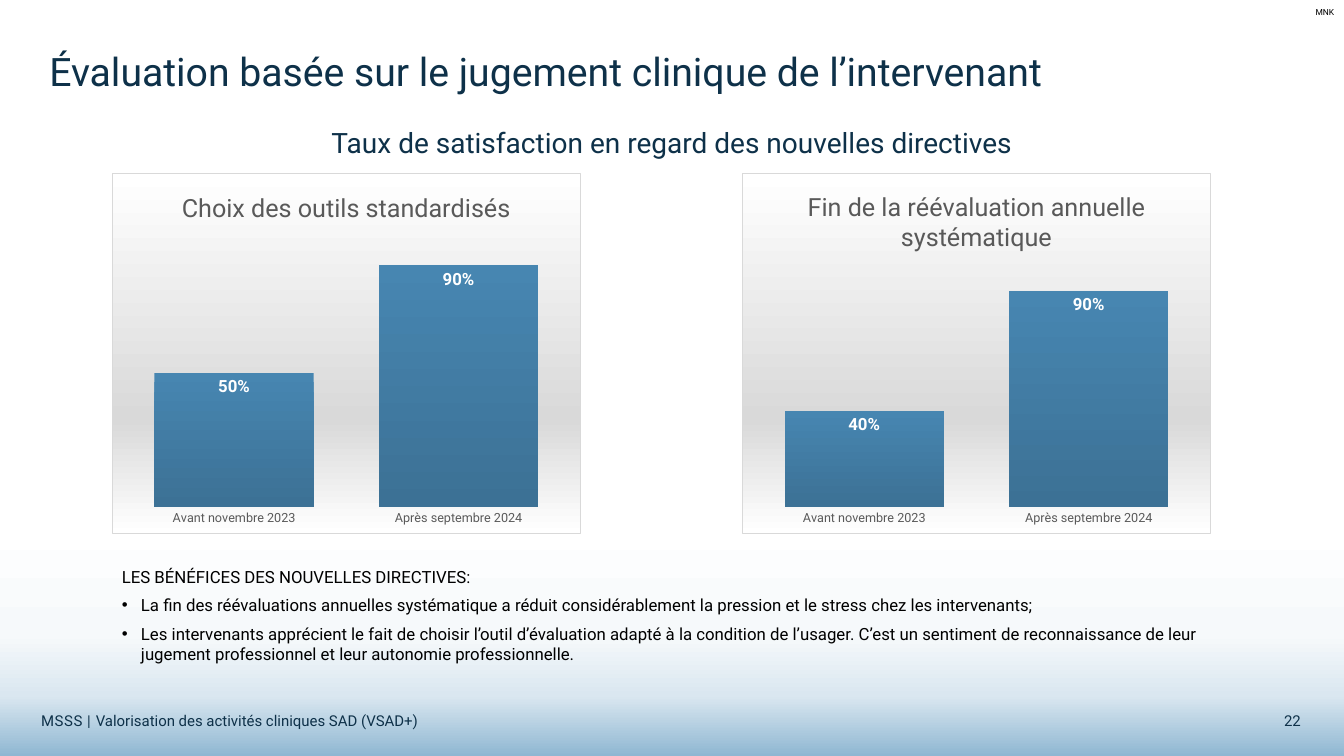
from dataclasses import dataclass

from lxml.etree import SubElement
from pptx import Presentation
from pptx.chart.data import CategoryChartData
from pptx.dml.color import RGBColor
from pptx.enum.chart import XL_CHART_TYPE, XL_LABEL_POSITION, XL_TICK_MARK
from pptx.enum.shapes import MSO_SHAPE
from pptx.enum.text import MSO_ANCHOR, PP_ALIGN
from pptx.oxml import parse_xml
from pptx.oxml.ns import nsdecls, qn
from pptx.util import Inches, Pt

FONT = "Roboto"
COLORS = {
    "white": "FFFFFF", "black": "000000", "navy": "0E3149", "grey": "595959",
    "silver": "D9D9D9", "bar_top": "4786B1", "bar_bottom": "3C7195",
    "mist": "F6F9FB", "pale_blue": "DAE7F0", "sky": "8FB7D2",
}
PAGE_GRADIENT = [(69, "white"), (84, "mist"), (92, "pale_blue"), (100, "sky")]
PANEL_GRADIENT = [(0, "white"), (68, "silver"), (100, "white")]
BAR_GRADIENT = [(0, "bar_top"), (100, "bar_bottom")]

PERIODS = ["Avant novembre 2023", "Après septembre 2024"]
CHART_TOP, CHART_WIDTH, CHART_HEIGHT = 1.72, 4.65, 3.58
PLOT_BOTTOM = 0.925


@dataclass
class Label:
    text: str
    left: float
    top: float
    width: float
    height: float
    size: float
    color: str = "navy"
    align: PP_ALIGN = PP_ALIGN.LEFT
    anchor: MSO_ANCHOR = MSO_ANCHOR.TOP
    wrap: bool = True


@dataclass
class SatisfactionChart:
    title: str
    left: float
    rates: list[float]
    plot_top: float


LABELS = [
    Label("22", 12.22, 7.01, 0.78, 0.28, 10.7, align=PP_ALIGN.RIGHT),
    Label("Taux de satisfaction en regard des nouvelles directives",
          0.39, 1.2, 12.55, 0.45, 20, align=PP_ALIGN.CENTER),
    Label("Évaluation basée sur le jugement clinique de l’intervenant",
          0.39, 0.36, 12.55, 0.68, 28, anchor=MSO_ANCHOR.MIDDLE),
    Label("MNK", 12.95, 0.02, 0.39, 0.2, 6, "black", wrap=False),
]
FOOTER = Label("MSSS | ", 0.31, 7.01, 9.88, 0.28, 10.7)
FOOTER_SUBJECT = "Valorisation des activités cliniques SAD (VSAD+)"
BENEFITS = Label("LES BÉNÉFICES DES NOUVELLES DIRECTIVES:",
                 1.11, 5.57, 11.11, 1.08, 12, "black")
BENEFIT_ITEMS = [
    "La fin des réévaluations annuelles systématique a réduit considérablement "
    "la pression et le stress chez les intervenants;",
    "Les intervenants apprécient le fait de choisir l’outil d’évaluation adapté à "
    "la condition de l’usager. C’est un sentiment de reconnaissance de leur "
    "jugement professionnel et leur autonomie professionnelle.",
]
CHARTS = [
    SatisfactionChart("Choix des outils standardisés", 1.11, [0.5, 0.9], 0.18),
    SatisfactionChart("Fin de la réévaluation annuelle systématique",
                      7.36, [0.4, 0.9], 0.26),
]


def style_font(font, size: float, color: str, bold: bool = False) -> None:
    font.name, font.size, font.bold = FONT, Pt(size), bold
    font.color.rgb = RGBColor.from_string(COLORS[color])


def append_gradient(properties, stops: list[tuple[int, str]]) -> None:
    """Add a top-to-bottom gradient to shape properties that have no fill."""
    gradient = SubElement(properties, qn("a:gradFill"), rotWithShape="1")
    stop_list = SubElement(gradient, qn("a:gsLst"))
    for percent, color in stops:
        stop = SubElement(stop_list, qn("a:gs"), pos=str(percent * 1000))
        SubElement(stop, qn("a:srgbClr"), val=COLORS[color])
    SubElement(gradient, qn("a:lin"), ang="5400000", scaled="0")


def add_label(slide, label: Label):
    box = slide.shapes.add_textbox(Inches(label.left), Inches(label.top),
                                   Inches(label.width), Inches(label.height))
    frame = box.text_frame
    frame.word_wrap = label.wrap
    frame.vertical_anchor = label.anchor
    frame.text = label.text
    paragraph = frame.paragraphs[0]
    paragraph.alignment = label.align
    style_font(paragraph.runs[0].font, label.size, label.color)
    return frame


def add_background(presentation, slide) -> None:
    shape = slide.shapes.add_shape(MSO_SHAPE.RECTANGLE, 0, 0,
                                   presentation.slide_width, presentation.slide_height)
    append_gradient(shape._element.spPr, PAGE_GRADIENT)
    shape.line.fill.background()
    shape.shadow.inherit = False


def add_footer(slide) -> None:
    paragraph = add_label(slide, FOOTER).paragraphs[0]
    paragraph.runs[0].font._element.set("spc", "40")
    subject = paragraph.add_run()
    subject.text = FOOTER_SUBJECT
    style_font(subject.font, FOOTER.size, FOOTER.color)


def add_benefits(slide) -> None:
    frame = add_label(slide, BENEFITS)
    for item in BENEFIT_ITEMS:
        frame.paragraphs[-1].space_after = Pt(6)
        paragraph = frame.add_paragraph()
        paragraph.text = item
        properties = paragraph._p.get_or_add_pPr()
        properties.set("marL", str(Inches(0.19)))
        properties.set("indent", str(-Inches(0.19)))
        SubElement(properties, qn("a:buFont"), typeface="Arial")
        SubElement(properties, qn("a:buChar"), char="•")
        style_font(paragraph.runs[0].font, BENEFITS.size, BENEFITS.color)


def style_panel(chart) -> None:
    """Give the chart area its gradient and thin border."""
    panel = parse_xml(f'<c:spPr {nsdecls("c", "a")}/>')
    append_gradient(panel, PANEL_GRADIENT)
    border = SubElement(panel, qn("a:ln"), w=str(Pt(0.75)))
    SubElement(SubElement(border, qn("a:solidFill")), qn("a:srgbClr"),
               val=COLORS["silver"])
    chart._chartSpace.find(qn("c:chart")).addnext(panel)


def place_plot(chart, top: float) -> None:
    """Fix the inner plot area, in fractions of the chart area."""
    plot_area = chart._chartSpace.find(qn("c:chart")).find(qn("c:plotArea"))
    for old_layout in plot_area.findall(qn("c:layout")):
        plot_area.remove(old_layout)
    layout = parse_xml(f'<c:layout {nsdecls("c")}/>')
    manual = SubElement(layout, qn("c:manualLayout"))
    settings = {"layoutTarget": "inner", "xMode": "edge", "yMode": "edge",
                "x": 0.02, "y": top, "w": 0.96, "h": round(PLOT_BOTTOM - top, 3)}
    for name, value in settings.items():
        SubElement(manual, qn(f"c:{name}"), val=str(value))
    plot_area.insert(0, layout)


def add_satisfaction_chart(slide, satisfaction: SatisfactionChart) -> None:
    data = CategoryChartData(number_format="0%")
    data.categories = PERIODS
    data.add_series(satisfaction.title, satisfaction.rates)
    chart = slide.shapes.add_chart(
        XL_CHART_TYPE.COLUMN_CLUSTERED, Inches(satisfaction.left), Inches(CHART_TOP),
        Inches(CHART_WIDTH), Inches(CHART_HEIGHT), data).chart
    style_font(chart.font, 10, "black")
    style_panel(chart)
    place_plot(chart, satisfaction.plot_top)

    chart.has_legend = False
    chart.has_title = True
    title = chart.chart_title.text_frame
    title.text = satisfaction.title
    style_font(title.paragraphs[0].runs[0].font, 18, "grey")

    value_axis = chart.value_axis
    value_axis.minimum_scale, value_axis.maximum_scale = 0, 1
    value_axis.has_major_gridlines = False
    value_axis.visible = False
    category_axis = chart.category_axis
    category_axis.major_tick_mark = XL_TICK_MARK.NONE
    category_axis.format.line.fill.background()
    style_font(category_axis.tick_labels.font, 9, "grey")

    plot = chart.plots[0]
    plot.gap_width = 41
    plot.vary_by_categories = False
    append_gradient(plot.series[0]._element.get_or_add_spPr(), BAR_GRADIENT)
    plot.has_data_labels = True
    labels = plot.data_labels
    labels.show_value = True
    labels.number_format, labels.number_format_is_linked = "0%", False
    labels.position = XL_LABEL_POSITION.INSIDE_END
    style_font(labels.font, 12, "white", bold=True)


def main() -> None:
    presentation = Presentation()
    presentation.slide_width, presentation.slide_height = Inches(13.33), Inches(7.5)
    slide = presentation.slides.add_slide(presentation.slide_layouts[6])
    add_background(presentation, slide)
    add_footer(slide)
    for label in LABELS:
        add_label(slide, label)
    add_benefits(slide)
    for satisfaction in CHARTS:
        add_satisfaction_chart(slide, satisfaction)
    presentation.save("out.pptx")


if __name__ == "__main__":
    main()
